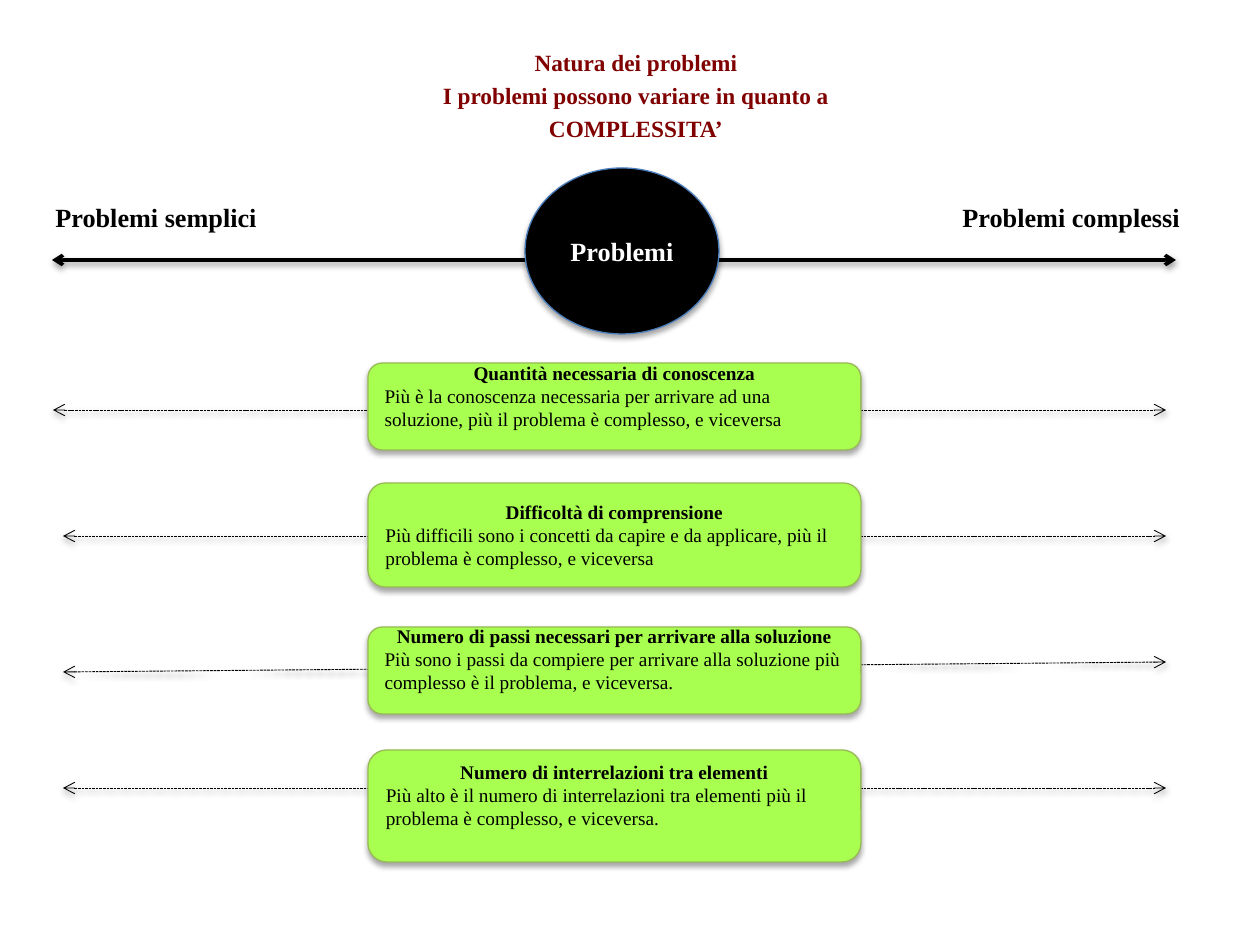
from dataclasses import dataclass

from lxml import etree
from pptx import Presentation
from pptx.dml.color import RGBColor
from pptx.enum.dml import MSO_LINE
from pptx.enum.shapes import MSO_CONNECTOR, MSO_SHAPE
from pptx.enum.text import MSO_ANCHOR, PP_ALIGN
from pptx.oxml.ns import qn
from pptx.util import Emu, Pt

OVAL, ROUNDED = MSO_SHAPE.OVAL, MSO_SHAPE.ROUNDED_RECTANGLE
STRAIGHT = MSO_CONNECTOR.STRAIGHT
DASHED = MSO_LINE.SQUARE_DOT
TOP, MIDDLE = MSO_ANCHOR.TOP, MSO_ANCHOR.MIDDLE
LEFT, CENTER = PP_ALIGN.LEFT, PP_ALIGN.CENTER
EMU_PER_PX = 914400 / 126


@dataclass(frozen=True)
class Theme:
    """Colours, font and type sizes of the slide."""
    font: str = "Times New Roman"
    title: str = "800000"
    black: str = "000000"
    white: str = "FFFFFF"
    oval_line: str = "4B7EBC"
    card_fill: str = "A8FF50"
    card_line: str = "98B955"
    title_size: float = 13.3
    label_size: float = 15
    card_size: float = 11


THEME = Theme()

TITLE_LINES = ["Natura dei problemi", "I problemi possono variare in quanto a", "COMPLESSITA’"]

# Each card: top, height, bottom inset, heading, body
CARDS = [
    (363, 87, 22, "Quantità necessaria di conoscenza",
     "Più è la conoscenza necessaria per arrivare ad una soluzione, "
     "più il problema è complesso, e viceversa"),
    (483, 104, 0, "Difficoltà di comprensione",
     "Più difficili sono i concetti da capire e da applicare, "
     "più il problema è complesso, e viceversa"),
    (627, 87, 24, "Numero di passi necessari per arrivare alla soluzione",
     "Più sono i passi da compiere per arrivare alla soluzione "
     "più complesso è il problema, e viceversa."),
    (750, 112, 23, "Numero di interrelazioni tra elementi",
     "Più alto è il numero di interrelazioni tra elementi "
     "più il problema è complesso, e viceversa."),
]

DASHED_ARROWS = [(53, 410, 410), (63, 536, 536), (63, 672, 662), (63, 788, 788)]


def px(length):
    """Turn pixels into EMU."""
    return Emu(round(length * EMU_PER_PX))


def add_shadow(element, opacity, distance):
    """Give a shape or connector a soft shadow straight below it."""
    effects = etree.SubElement(element.spPr, qn("a:effectLst"))
    shadow = etree.SubElement(effects, qn("a:outerShdw"), blurRad=str(Pt(3.1)),
                              dist=str(Pt(distance)), dir="5400000", rotWithShape="0")
    color = etree.SubElement(shadow, qn("a:srgbClr"), val=THEME.black)
    etree.SubElement(color, qn("a:alpha"), val=str(opacity * 1000))


def write_paragraph(para, text, size, color, bold=True, align=CENTER):
    """Fill a paragraph with one styled run."""
    para.alignment = align
    span = para.add_run()
    span.text = text
    span.font.name = THEME.font
    span.font.size = Pt(size)
    span.font.bold = bold
    span.font.color.rgb = RGBColor.from_string(color)


def add_title(page):
    """Add the centred three-line title."""
    box = page.shapes.add_textbox(px(305), px(42), px(662), px(100))
    frame = box.text_frame
    frame.word_wrap = True
    frame.vertical_anchor = TOP
    for index, line in enumerate(TITLE_LINES):
        para = frame.add_paragraph() if index else frame.paragraphs[0]
        if index:
            para.space_before = Pt(3)
        write_paragraph(para, line, THEME.title_size, THEME.title)


def add_label(page, left, width, text):
    """Add a label above one end of the main arrow."""
    box = page.shapes.add_textbox(px(left), px(195), px(width), px(44))
    box.text_frame.word_wrap = False
    write_paragraph(box.text_frame.paragraphs[0], text, THEME.label_size,
                    THEME.black, align=LEFT)


def add_arrow(page, start, end, width, dash=None):
    """Add a two-headed arrow."""
    arrow = page.shapes.add_connector(STRAIGHT, *map(px, start + end))
    arrow.line.width = Pt(width)
    arrow.line.color.rgb = RGBColor.from_string(THEME.black)
    if dash is not None:
        arrow.line.dash_style = dash
    outline = arrow.line._get_or_add_ln()
    for tag in ("a:headEnd", "a:tailEnd"):
        etree.SubElement(outline, qn(tag), type="arrow")
    add_shadow(arrow._element, 38, 1.6)


def add_filled_shape(page, kind, bounds, fill, line):
    """Add a shadowed shape and return its text frame."""
    shape = page.shapes.add_shape(kind, *map(px, bounds))
    shape.fill.solid()
    shape.fill.fore_color.rgb = RGBColor.from_string(fill)
    shape.line.color.rgb = RGBColor.from_string(line)
    shape.line.width = Pt(0.75)
    add_shadow(shape._element, 35, 1.8)
    frame = shape.text_frame
    frame.word_wrap = True
    frame.vertical_anchor = MIDDLE
    return frame


def add_card(page, top, height, bottom_inset, heading, body):
    """Add a green card with a heading and an explanation."""
    frame = add_filled_shape(page, ROUNDED, (368, top, 493, height),
                             THEME.card_fill, THEME.card_line)
    frame.margin_top = 0
    frame.margin_bottom = px(bottom_inset)
    write_paragraph(frame.paragraphs[0], heading, THEME.card_size, THEME.black)
    write_paragraph(frame.add_paragraph(), body, THEME.card_size, THEME.black,
                    bold=False, align=LEFT)


def main():
    """Build and save the slide."""
    deck = Presentation()
    deck.slide_width, deck.slide_height = px(1260), px(945)
    page = deck.slides.add_slide(deck.slide_layouts[6])
    add_title(page)
    add_label(page, 43, 228, "Problemi semplici")
    add_label(page, 950, 244, "Problemi complessi")
    add_arrow(page, (52, 260), (1176, 260), 2)
    oval = add_filled_shape(page, OVAL, (525, 168, 194, 166), THEME.black, THEME.oval_line)
    write_paragraph(oval.paragraphs[0], "Problemi", THEME.label_size, THEME.white)
    for left, start_y, end_y in DASHED_ARROWS:
        add_arrow(page, (left, start_y), (1166, end_y), 0.5, DASHED)
    for card in CARDS:
        add_card(page, *card)
    deck.save("out.pptx")


if __name__ == "__main__":
    main()
